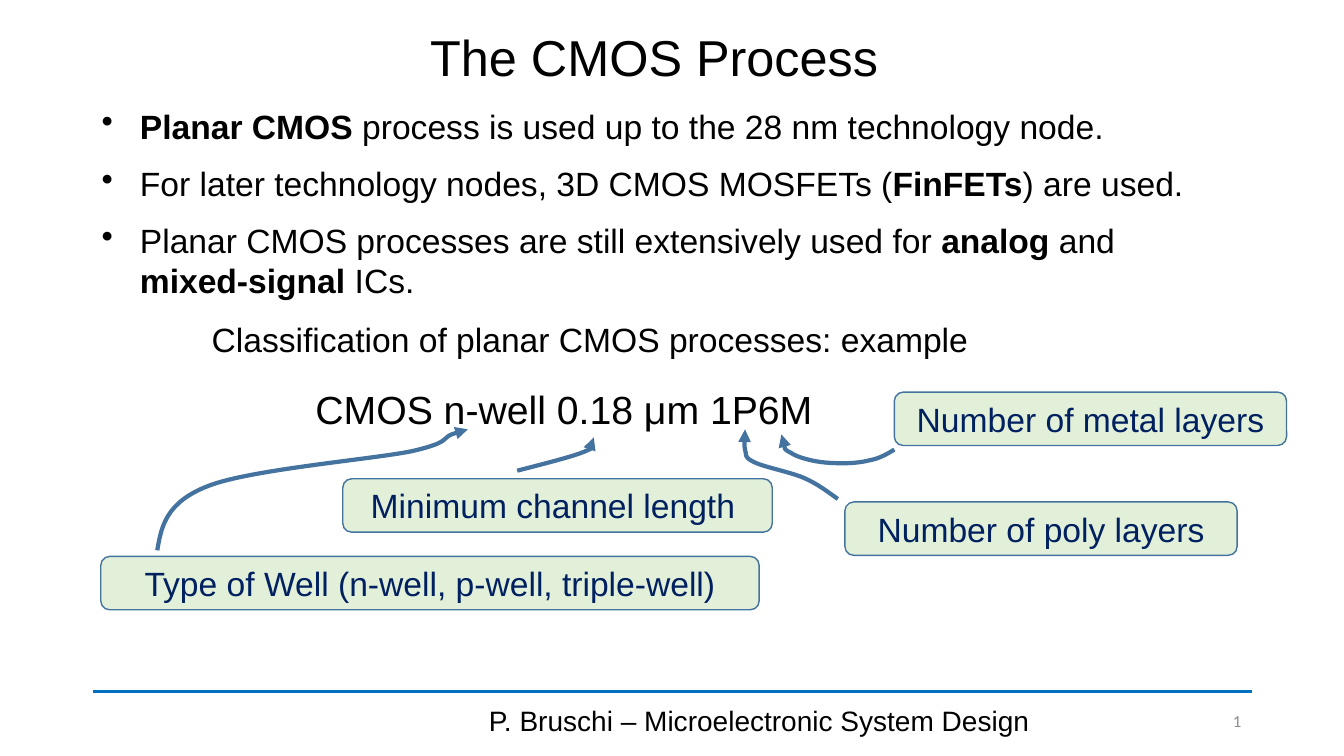
from dataclasses import dataclass

from lxml import etree
from pptx import Presentation
from pptx.dml.color import RGBColor
from pptx.enum.shapes import MSO_CONNECTOR, MSO_SHAPE
from pptx.enum.text import MSO_ANCHOR, PP_ALIGN
from pptx.oxml.ns import qn
from pptx.util import Inches, Pt

LEFT, CENTER, RIGHT = PP_ALIGN.LEFT, PP_ALIGN.CENTER, PP_ALIGN.RIGHT
TOP, MIDDLE = MSO_ANCHOR.TOP, MSO_ANCHOR.MIDDLE
ROUNDED = MSO_SHAPE.ROUNDED_RECTANGLE
STRAIGHT = MSO_CONNECTOR.STRAIGHT


@dataclass(frozen=True)
class Theme:
    font: str = "Arial"
    number_font: str = "Calibri"
    ink: RGBColor = RGBColor.from_string("000000")
    muted: RGBColor = RGBColor.from_string("8C8C8C")
    rule: RGBColor = RGBColor.from_string("0070C0")
    callout_fill: RGBColor = RGBColor.from_string("E2F0D9")
    callout_text: RGBColor = RGBColor.from_string("002060")
    outline: RGBColor = RGBColor.from_string("43739E")
    title: int = 36
    example: int = 28
    body: int = 24
    footer: int = 20
    number: int = 12


THEME = Theme()

# Each bullet is a list of (text, bold) spans.
BULLETS = [
    [("Planar CMOS ", True),
     ("process is used up to the 28 nm technology node.", False)],
    [("For later technology nodes, 3D CMOS MOSFETs (", False),
     ("FinFETs", True), (") are used.", False)],
    [("Planar CMOS processes are still extensively used for ", False),
     ("analog", True), (" and ", False), ("mixed-signal ", True),
     ("ICs.", False)],
]

# Text, left, top and width, relative to the diagram box.
CALLOUT_HEIGHT = 0.53
CALLOUTS = [
    ("Minimum channel length ", 2.4, 1.64, 4.26),
    ("Type of Well (n-well, p-well, triple-well)", 0, 2.41, 6.53),
    ("Number of poly layers", 7.38, 1.87, 3.89),
    ("Number of metal layers", 7.87, 0.78, 3.89),
]

# Start point, then three points for each Bézier segment, relative to the diagram box.
ARROWS = [
    [(0.56, 2.35), (0.6, 2.11), (0.65, 1.87), (1.07, 1.71),
     (1.48, 1.55), (2.66, 1.45), (3.07, 1.37),
     (3.47, 1.28), (3.38, 1.24), (3.48, 1.2),
     (3.57, 1.17), (3.61, 1.16), (3.64, 1.15)],
    [(4.13, 1.56), (4.4, 1.49), (4.68, 1.42), (4.8, 1.37),
     (4.93, 1.31), (4.89, 1.23), (4.89, 1.23)],
    [(7.31, 1.84), (7.21, 1.77), (7.11, 1.69), (6.97, 1.63),
     (6.83, 1.57), (6.56, 1.52), (6.47, 1.47),
     (6.37, 1.42), (6.41, 1.4), (6.39, 1.35),
     (6.38, 1.3), (6.39, 1.15), (6.39, 1.15)],
    [(7.87, 1.35), (7.79, 1.4), (7.72, 1.44), (7.61, 1.46),
     (7.49, 1.49), (7.33, 1.49), (7.2, 1.48),
     (7.07, 1.47), (6.91, 1.43), (6.84, 1.38),
     (6.76, 1.34), (6.75, 1.2), (6.75, 1.2)],
]


def style_font(font, size, color, name=THEME.font):
    font.name, font.size = name, Pt(size)
    font.color.rgb = color


def add_text(page, box, text, size, color=THEME.ink, name=THEME.font,
             align=LEFT, anchor=TOP, wrap=True):
    frame = page.shapes.add_textbox(*map(Inches, box)).text_frame
    frame.word_wrap = wrap
    frame.vertical_anchor = anchor
    para = frame.paragraphs[0]
    para.text = text
    para.alignment = align
    style_font(para.font, size, color, name)
    return para


def add_title(page, box):
    para = add_text(page, box, "The CMOS Process", THEME.title,
                    align=CENTER, anchor=MIDDLE)
    para.line_spacing = 0.9


def add_bullets(page, box):
    frame = page.shapes.add_textbox(*map(Inches, box)).text_frame
    frame.word_wrap = True
    for index, spans in enumerate(BULLETS):
        para = frame.add_paragraph() if index else frame.paragraphs[0]
        para.space_after = Pt(12)
        style_font(para.font, THEME.body, THEME.ink)
        for text, bold in spans:
            span = para.add_run()
            span.text, span.font.bold = text, bold
        properties = para._p.get_or_add_pPr()
        indent = Inches(0.38)
        properties.set("marL", str(indent))
        properties.set("indent", str(-indent))
        marker = etree.Element(qn("a:buChar"), char="•")
        properties.find(qn("a:spcAft")).addnext(marker)


def add_callout(page, box, text):
    callout = page.shapes.add_shape(ROUNDED, *map(Inches, box))
    callout.shadow.inherit = False
    callout.fill.solid()
    callout.fill.fore_color.rgb = THEME.callout_fill
    callout.line.color.rgb = THEME.outline
    callout.line.width = Pt(1)
    frame = callout.text_frame
    frame.word_wrap = True
    frame.vertical_anchor = MIDDLE
    para = frame.paragraphs[0]
    para.text = text
    para.alignment = CENTER
    style_font(para.font, THEME.body, THEME.callout_text)


def add_curved_arrow(page, points):
    """Draw a cubic Bézier curve with an arrowhead at its last point."""
    start, *rest = [(Inches(x), Inches(y)) for x, y in points]
    builder = page.shapes.build_freeform(*start)
    builder.add_line_segments(rest, close=False)
    arrow = builder.convert_to_shape()
    arrow.shadow.inherit = False
    arrow.fill.background()
    arrow.line.color.rgb = THEME.outline
    arrow.line.width = Pt(3)
    etree.SubElement(arrow.line._get_or_add_ln(), qn("a:tailEnd"),
                     type="triangle")

    # Turn every three straight segments into one cubic segment.
    steps = list(arrow._element.iter(qn("a:lnTo")))
    for index in range(0, len(steps), 3):
        curve = etree.Element(qn("a:cubicBezTo"))
        steps[index].addprevious(curve)
        for step in steps[index:index + 3]:
            curve.append(step[0])
            step.getparent().remove(step)


def add_process_diagram(page, box):
    left, top, width, height = box
    add_text(page, (left + 1, top, 7.78, 0.5),
             "Classification of planar CMOS processes: example",
             THEME.body, wrap=False)
    add_text(page, (left + 2.03, top + 0.66, 6.32, 0.57),
             "CMOS n-well 0.18 μm 1P6M", THEME.example)
    for text, x, y, callout_width in CALLOUTS:
        add_callout(page, (left + x, top + y, callout_width, CALLOUT_HEIGHT), text)
    for points in ARROWS:
        add_curved_arrow(page, [(left + x, top + y) for x, y in points])


def add_footer(page, box):
    left, top, width, height = box
    rule = page.shapes.add_connector(
        STRAIGHT, Inches(left), Inches(top), Inches(left + width), Inches(top))
    rule.line.color.rgb = THEME.rule
    rule.line.width = Pt(2.75)
    etree.SubElement(rule._element.spPr, qn("a:effectLst"))
    text_top, text_height = top + 0.09, height - 0.09
    add_text(page, (left + 3.5, text_top, 6.22, text_height),
             "P. Bruschi – Microelectronic System Design", THEME.footer,
             align=CENTER, anchor=MIDDLE)
    add_text(page, (left + width - 0.97, text_top, 0.96, text_height), "1",
             THEME.number, THEME.muted, THEME.number_font, RIGHT, MIDDLE)


def main():
    deck = Presentation()
    deck.slide_width, deck.slide_height = Inches(13.33), Inches(7.5)
    page = deck.slides.add_slide(deck.slide_layouts[6])
    add_footer(page, (0.92, 6.86, 11.5, 0.49))
    add_title(page, (0.74, 0.19, 11.5, 0.81))
    add_bullets(page, (0.91, 1, 11.36, 2.05))
    add_process_diagram(page, (1, 3.11, 11.76, 2.94))
    deck.save("out.pptx")


if __name__ == "__main__":
    main()
